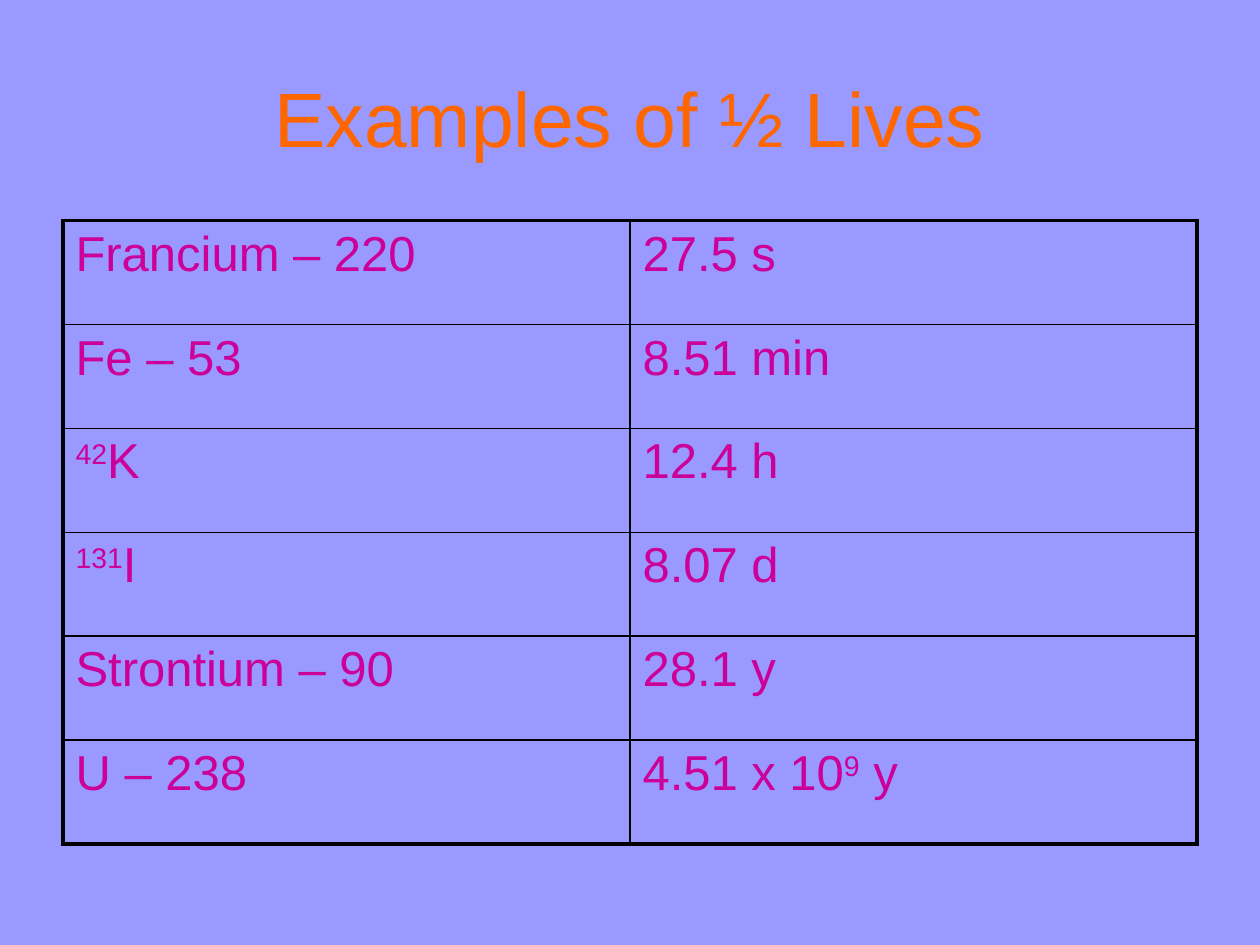
import pptx
import pptx.dml.color
import pptx.enum.text
import pptx.oxml.ns
import pptx.util
import lxml.etree
from pptx.util import Inches

# Content: text between carets is superscript
TITLE = "Examples of ½ Lives"
HALF_LIVES = [
    ("Francium – 220", "27.5 s"),
    ("Fe – 53", "8.51 min"),
    ("^42^K", "12.4 h"),
    ("^131^I", "8.07 d"),
    ("Strontium – 90", "28.1 y"),
    ("U – 238", "4.51 x 10^9^ y"),
]

THEME = {
    "font": "Arial",
    "background": "9999FF",
    "title": "FF6600",
    "body": "CC0099",
    "border": "000000",
    "title_size": 44,
    "body_size": 28,
    "outer_width": 2.25,
    "inner_width": 1,
}

LEFT, WIDTH = 0.5, 9
TITLE_TOP, TITLE_HEIGHT = 0.3, 1.25
TABLE_TOP, TABLE_HEIGHT = 1.75, 4.95


def rgb(color):
    return pptx.dml.color.RGBColor.from_string(color)


def write_text(text_frame, text, *, size, color, align=None):
    paragraph = text_frame.paragraphs[0]
    paragraph.alignment = align
    for index, part in enumerate(text.split("^")):
        if not part:
            continue
        run = paragraph.add_run()
        run.text = part
        run.font.name = THEME["font"]
        run.font.size = pptx.util.Pt(size)
        run.font.color.rgb = rgb(color)
        if index % 2:
            run.font._element.set("baseline", "30000")


def set_border(cell, side, width):
    qualified = pptx.oxml.ns.qn
    properties = cell._tc.get_or_add_tcPr()
    line = lxml.etree.SubElement(properties, qualified(f"a:ln{side}"),
                                 w=str(pptx.util.Pt(width)))
    fill = lxml.etree.SubElement(line, qualified("a:solidFill"))
    lxml.etree.SubElement(fill, qualified("a:srgbClr"), val=THEME["border"])


def add_title(slide):
    box = slide.shapes.add_textbox(Inches(LEFT), Inches(TITLE_TOP),
                                   Inches(WIDTH), Inches(TITLE_HEIGHT))
    box.text_frame.word_wrap = True
    box.text_frame.vertical_anchor = pptx.enum.text.MSO_ANCHOR.MIDDLE
    write_text(box.text_frame, TITLE, size=THEME["title_size"],
               color=THEME["title"], align=pptx.enum.text.PP_ALIGN.CENTER)


def add_half_life_table(slide):
    row_count, column_count = len(HALF_LIVES), len(HALF_LIVES[0])
    table = slide.shapes.add_table(
        row_count, column_count, Inches(LEFT), Inches(TABLE_TOP),
        Inches(WIDTH), Inches(TABLE_HEIGHT)).table
    table.first_row = table.horz_banding = False

    for row, values in enumerate(HALF_LIVES):
        for column, value in enumerate(values):
            cell = table.cell(row, column)
            write_text(cell.text_frame, value, size=THEME["body_size"],
                       color=THEME["body"])
            # Heavy lines around the table, thin lines inside
            outer_sides = {
                "L": column == 0,
                "R": column == column_count - 1,
                "T": row == 0,
                "B": row == row_count - 1,
            }
            for side, is_outer in outer_sides.items():
                set_border(cell, side,
                           THEME["outer_width" if is_outer else "inner_width"])
            cell.fill.background()


def main():
    presentation = pptx.Presentation()
    presentation.slide_width = Inches(10)
    presentation.slide_height = Inches(7.5)
    slide = presentation.slides.add_slide(presentation.slide_layouts[6])
    slide.background.fill.solid()
    slide.background.fill.fore_color.rgb = rgb(THEME["background"])
    add_title(slide)
    add_half_life_table(slide)
    presentation.save("out.pptx")


if __name__ == "__main__":
    main()
